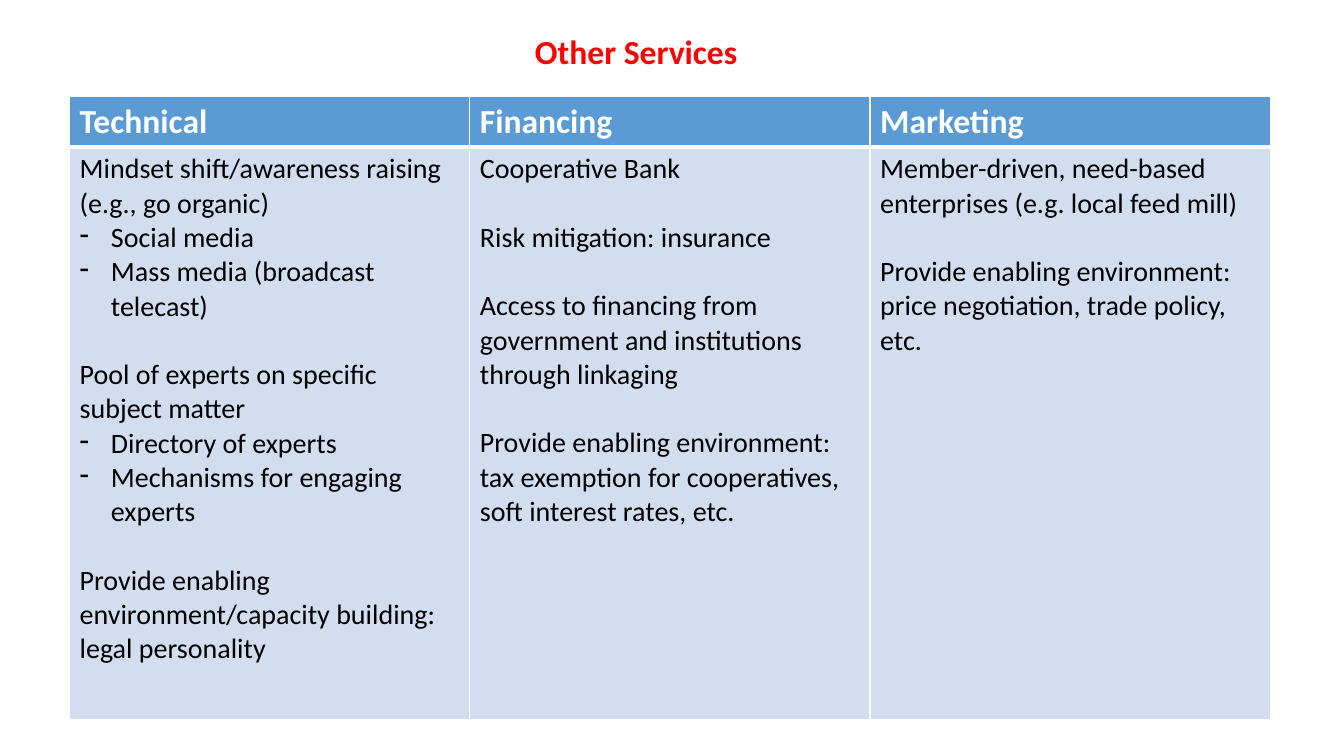
from lxml.etree import SubElement
from pptx import Presentation
from pptx.dml.color import RGBColor
from pptx.enum.text import PP_ALIGN
from pptx.oxml.ns import qn
from pptx.util import Inches, Pt

RED = RGBColor(0xFF, 0x00, 0x00)
WHITE = RGBColor(0xFF, 0xFF, 0xFF)
BLACK = RGBColor(0x00, 0x00, 0x00)
BLUE = RGBColor(0x5B, 0x9B, 0xD5)
PALE = RGBColor(0xD2, 0xDE, 0xEF)

# Content: each column is a head and groups; a group is a lead and its dashed items
TITLE = "Other Services"
COLUMNS = [
    ("Technical", [
        ("Mindset shift/awareness raising (e.g., go organic)",
         ["Social media", "Mass media (broadcast telecast)"]),
        ("Pool of experts on specific subject matter",
         ["Directory of experts", "Mechanisms for engaging experts"]),
        ("Provide enabling environment/capacity building: legal personality", []),
    ]),
    ("Financing", [
        ("Cooperative Bank", []),
        ("Risk mitigation: insurance", []),
        ("Access to financing from government and institutions through linkaging", []),
        ("Provide enabling environment: tax exemption for cooperatives, "
         "soft interest rates, etc.", []),
    ]),
    ("Marketing", [
        ("Member-driven, need-based enterprises (e.g. local feed mill)", []),
        ("Provide enabling environment: price negotiation, trade policy, etc.", []),
    ]),
]

# Formats
TITLE_FONT = {"name": "Calibri", "size": Pt(24), "bold": True}
BODY_FONT = {"name": "Calibri", "size": Pt(20), "bold": False}
GAP = Pt(24.4)  # one empty line between groups
INDENT = Inches(0.31)
THIN, THICK = Pt(1), Pt(3)

# Layout
WIDTH, HEIGHT = Inches(13.33), Inches(7.5)
LEFT, TOP = Inches(0.69), Inches(0.96)
COL = Inches(3.97)
ROWS = [Inches(0.5), Inches(5.68)]


def write(para, text, font, color):
    run = para.add_run()
    run.text = text
    for key, value in font.items():
        setattr(run.font, key, value)
    run.font.color.rgb = color


def dash(para):
    props = para._p.get_or_add_pPr()
    props.set("marL", str(INDENT))
    props.set("indent", str(-INDENT))
    SubElement(props, qn("a:buFontTx"))
    SubElement(props, qn("a:buChar"), char="-")


def style(cell, fill, edges):
    props = cell._tc.get_or_add_tcPr()
    for side, width in edges.items():
        line = SubElement(props, qn(f"a:ln{side}"), w=str(width))
        paint = SubElement(line, qn("a:solidFill"))
        SubElement(paint, qn("a:srgbClr"), val=str(WHITE))
    cell.fill.solid()
    cell.fill.fore_color.rgb = fill


def fill_body(frame, groups):
    para = frame.paragraphs[0]
    for rank, (lead, items) in enumerate(groups):
        if rank:
            para = frame.add_paragraph()
            para.space_before = GAP
        write(para, lead, BODY_FONT, BLACK)
        for item in items:
            para = frame.add_paragraph()
            dash(para)
            write(para, item, BODY_FONT, BLACK)


def main():
    deck = Presentation()
    deck.slide_width, deck.slide_height = WIDTH, HEIGHT
    slide = deck.slides.add_slide(deck.slide_layouts[6])

    # Title
    box = slide.shapes.add_textbox(Inches(3.44), Inches(0.26), Inches(5.74), Inches(0.5))
    box.text_frame.word_wrap = True
    para = box.text_frame.paragraphs[0]
    para.alignment = PP_ALIGN.CENTER
    write(para, TITLE, TITLE_FONT, RED)

    # Services table
    count = len(COLUMNS)
    table = slide.shapes.add_table(
        len(ROWS), count, LEFT, TOP, COL * count, sum(ROWS)).table
    for row, height in zip(table.rows, ROWS):
        row.height = height
    for col, (head, groups) in enumerate(COLUMNS):
        table.columns[col].width = COL
        top, body = table.cell(0, col), table.cell(1, col)
        style(top, BLUE, {"L": THIN, "R": THIN, "T": THIN, "B": THICK})
        style(body, PALE, {"L": THIN, "R": THIN, "T": THICK, "B": THIN})
        write(top.text_frame.paragraphs[0], head, TITLE_FONT, WHITE)
        fill_body(body.text_frame, groups)

    deck.save("out.pptx")


if __name__ == "__main__":
    main()
